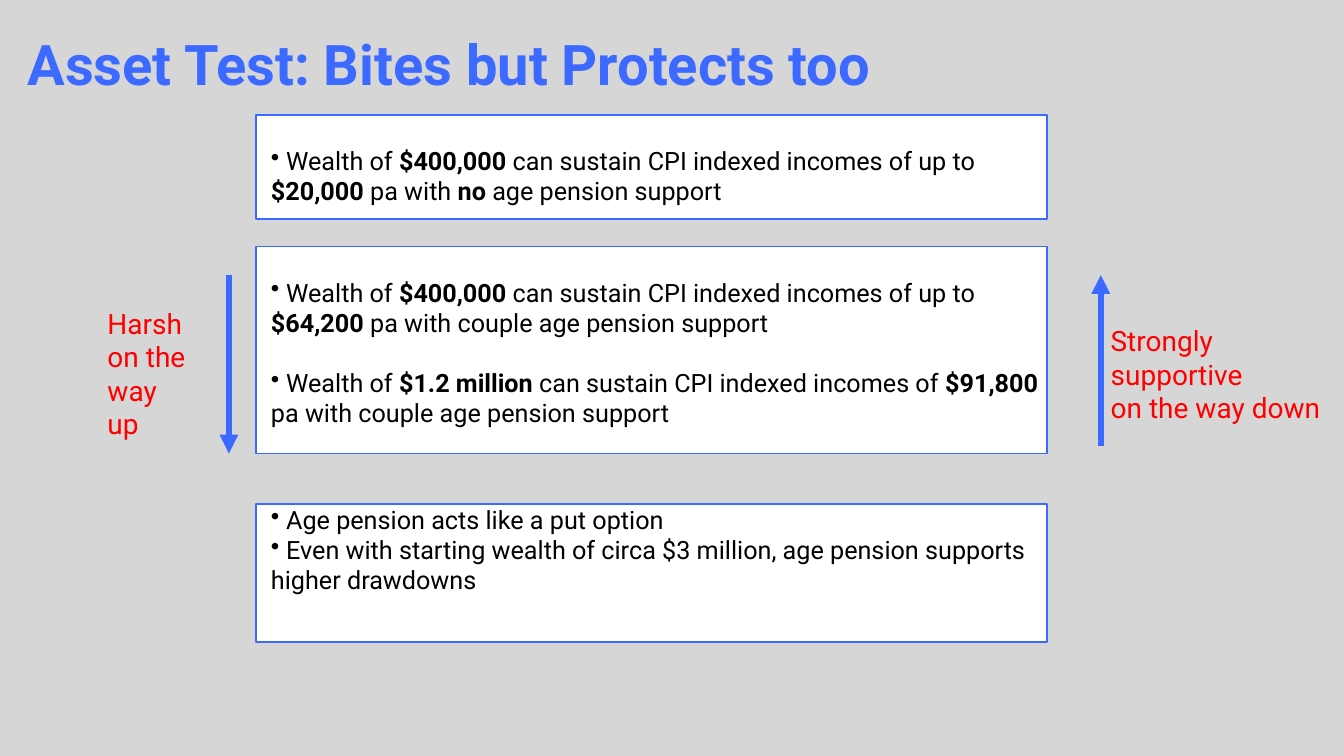
from dataclasses import dataclass

from lxml import etree
from pptx import Presentation
from pptx.dml.color import RGBColor
from pptx.enum.shapes import MSO_CONNECTOR, MSO_SHAPE
from pptx.enum.text import MSO_ANCHOR, PP_ALIGN
from pptx.oxml.ns import qn
from pptx.util import Cm, Pt

RECTANGLE = MSO_SHAPE.RECTANGLE
STRAIGHT = MSO_CONNECTOR.STRAIGHT
TOP = MSO_ANCHOR.TOP
LEFT = PP_ALIGN.LEFT


@dataclass(frozen=True)
class Theme:
    """Colours, font and type sizes of the slide."""
    background: RGBColor = RGBColor(0xD6, 0xD6, 0xD6)
    accent: RGBColor = RGBColor(0x3C, 0x69, 0xFF)
    card: RGBColor = RGBColor(0xFF, 0xFF, 0xFF)
    body: RGBColor = RGBColor(0x00, 0x00, 0x00)
    warning: RGBColor = RGBColor(0xFF, 0x00, 0x00)
    font: str = "Roboto"
    title_size: int = 40
    label_size: int = 20
    body_size: int = 18


THEME = Theme()
CARD_LEFT, CARD_WIDTH = 6.45, 19.94
BLANK_LINE = Pt(21.5)

CARDS = [
    (2.9, 2.62, BLANK_LINE, [
        " Wealth of **$400,000 **can sustain CPI indexed incomes of up to "
        "**$20,000 **pa with **no** age pension support",
    ]),
    (6.22, 5.21, BLANK_LINE, [
        " Wealth of **$400,000 **can sustain CPI indexed incomes of up to "
        "**$64,200 **pa with couple age pension support",
        " Wealth of **$1.2 million **can sustain CPI indexed incomes of "
        "**$91,800 **pa with couple age pension support",
    ]),
    (12.7, 3.48, 0, [
        " Age pension acts like a put option",
        " Even with starting wealth of circa $3 million, age pension supports "
        "higher drawdowns",
    ]),
]


def write_text(paragraph, text, size, color, bold=False, line_spacing=None,
               space_before=0, bullet=False):
    """Fill a paragraph, switching bold at each double asterisk."""
    paragraph.alignment = LEFT
    paragraph.line_spacing = line_spacing
    paragraph.space_before = space_before
    if bullet:
        properties = paragraph._p.get_or_add_pPr()
        properties.set("marL", str(Cm(0.38)))
        properties.set("indent", "0")
        etree.SubElement(properties, qn("a:buChar")).set("char", "•")
    for index, part in enumerate(text.split("**")):
        if part:
            run = paragraph.add_run()
            run.text = part
            run.font.name = THEME.font
            run.font.size = Pt(size)
            run.font.bold = bold or index % 2 == 1
            run.font.color.rgb = color


def write_paragraphs(frame, texts, gap=0, **text_format):
    """Write one paragraph per text, with a gap between them."""
    frame.word_wrap = True
    frame.vertical_anchor = TOP
    for index, text in enumerate(texts):
        paragraph = frame.add_paragraph() if index else frame.paragraphs[0]
        write_text(paragraph, text, space_before=gap if index else 0, **text_format)


def set_margins(frame, top=0):
    """Remove the inner margins, apart from an optional top one."""
    frame.margin_left = frame.margin_right = frame.margin_bottom = 0
    frame.margin_top = top


def add_text_box(slide, left, top, width, height, texts, **text_format):
    """Add a text box and return its text frame."""
    box = slide.shapes.add_textbox(Cm(left), Cm(top), Cm(width), Cm(height))
    write_paragraphs(box.text_frame, texts, **text_format)
    return box.text_frame


def add_card(slide, top, height, blank_line, texts):
    """Add an outlined white card with bulleted text."""
    shape = slide.shapes.add_shape(
        RECTANGLE, Cm(CARD_LEFT), Cm(top), Cm(CARD_WIDTH), Cm(height))
    shape.shadow.inherit = False
    shape.fill.solid()
    shape.fill.fore_color.rgb = THEME.card
    shape.line.color.rgb = THEME.accent
    shape.line.width = Pt(1)
    set_margins(shape.text_frame, top=blank_line)
    write_paragraphs(shape.text_frame, texts, gap=blank_line,
                     size=THEME.body_size, color=THEME.body, bullet=True)


def add_arrow(slide, x, start, end):
    """Add a vertical arrow pointing at its end."""
    arrow = slide.shapes.add_connector(STRAIGHT, Cm(x), Cm(start), Cm(x), Cm(end))
    arrow.line.color.rgb = THEME.accent
    arrow.line.width = Pt(4.5)
    etree.SubElement(arrow.line._get_or_add_ln(), qn("a:tailEnd")).set("type", "triangle")
    etree.SubElement(arrow._element.spPr, qn("a:effectLst"))


def main():
    """Build and save the slide."""
    presentation = Presentation()
    presentation.slide_width, presentation.slide_height = Cm(33.87), Cm(19.05)
    slide = presentation.slides.add_slide(presentation.slide_layouts[6])
    slide.background.fill.solid()
    slide.background.fill.fore_color.rgb = THEME.background

    title_frame = add_text_box(
        slide, 0.69, 0.94, 31.45, 1.88, ["Asset Test: Bites but Protects too"],
        size=THEME.title_size, color=THEME.accent, bold=True, line_spacing=0.9)
    set_margins(title_frame)
    for card in CARDS:
        add_card(slide, *card)

    label_format = {"size": THEME.label_size, "color": THEME.warning}
    add_text_box(slide, 2.46, 7.59, 2.67, 2.82, ["Harsh on the way up"], **label_format)
    add_text_box(slide, 27.74, 8.03, 6.12, 1.96,
                 ["Strongly supportive", "on the way down"], **label_format)
    add_arrow(slide, 5.77, 6.93, 11.43)
    add_arrow(slide, 27.74, 11.25, 6.93)
    presentation.save("out.pptx")


if __name__ == "__main__":
    main()
